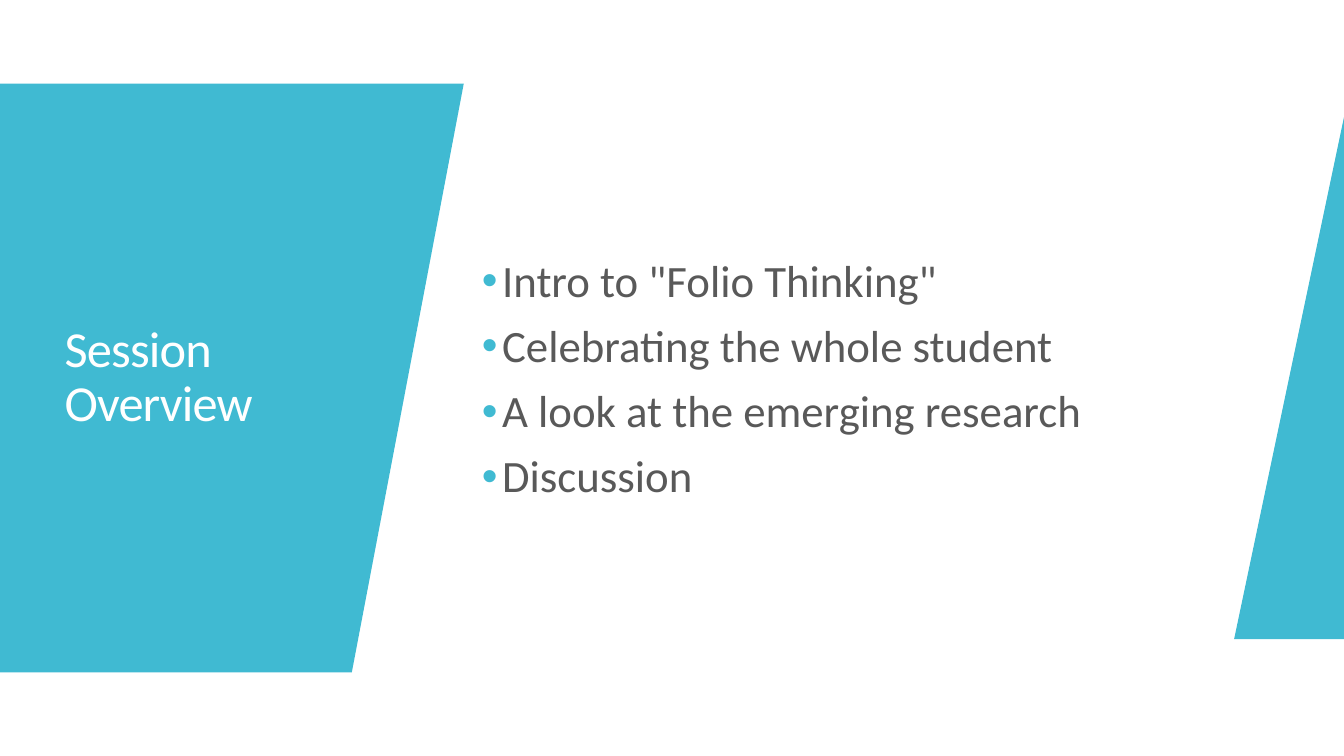
import pptx
import pptx.dml.color
import pptx.enum.text
import pptx.oxml.ns
import pptx.util
from lxml import etree
from pptx.util import Inches

ACCENT = "40BAD2"
FONT = "Calibri"
SLIDE_WIDTH, SLIDE_HEIGHT = 13.33, 7.5
TOPICS = [
    'Intro to "Folio Thinking"',
    "Celebrating the whole student",
    "A look at the emerging research",
    "Discussion",
]


def rgb(hex_colour):
    return pptx.dml.color.RGBColor.from_string(hex_colour)


def add_panel(slide, corners):
    points = [(Inches(x), Inches(y)) for x, y in corners]
    builder = slide.shapes.build_freeform(*points[0])
    builder.add_line_segments(points[1:], close=True)
    panel = builder.convert_to_shape()
    panel.shadow.inherit = False
    panel.fill.solid()
    panel.fill.fore_color.rgb = rgb(ACCENT)
    panel.line.fill.background()
    slide.shapes.title.element.addprevious(panel.element)


def place(placeholder, left, top, width, height):
    placeholder.left, placeholder.top = Inches(left), Inches(top)
    placeholder.width, placeholder.height = Inches(width), Inches(height)
    frame = placeholder.text_frame
    frame.word_wrap = True
    frame.auto_size = pptx.enum.text.MSO_AUTO_SIZE.NONE
    frame.vertical_anchor = pptx.enum.text.MSO_ANCHOR.MIDDLE
    return frame


def write(paragraph, text, size, colour, space_before=0):
    paragraph.alignment = pptx.enum.text.PP_ALIGN.LEFT
    paragraph.line_spacing = 0.9
    paragraph.space_before = pptx.util.Pt(space_before)
    run = paragraph.add_run()
    run.text = text
    run.font.name = FONT
    run.font.size = pptx.util.Pt(size)
    run.font.color.rgb = rgb(colour)
    return run


def add_bullet(paragraph, colour):
    qn = pptx.oxml.ns.qn
    properties = paragraph._p.get_or_add_pPr()
    properties.set("marL", str(Inches(0.38)))
    properties.set("indent", str(Inches(-0.2)))
    bullet_colour = etree.SubElement(properties, qn("a:buClr"))
    etree.SubElement(bullet_colour, qn("a:srgbClr"), val=colour)
    etree.SubElement(properties, qn("a:buFont"), typeface="Arial")
    etree.SubElement(properties, qn("a:buChar"), char="•")


def main():
    deck = pptx.Presentation()
    deck.slide_width, deck.slide_height = Inches(SLIDE_WIDTH), Inches(SLIDE_HEIGHT)
    slide = deck.slides.add_slide(deck.slide_layouts[0])
    slide.background.fill.solid()
    slide.background.fill.fore_color.rgb = rgb("FFFFFF")

    add_panel(slide, [(0, 0.83), (4.6, 0.83), (3.49, 6.67), (0, 6.67)])
    add_panel(slide, [(SLIDE_WIDTH, 1.16), (SLIDE_WIDTH, 6.34), (12.24, 6.34)])

    heading = place(slide.shapes.title, 0.54, 1.84, 3.03, 3.82)
    heading_run = write(heading.paragraphs[0], "Session Overview", 36, "FFFFFF")
    heading_run.font._element.set("spc", "-60")

    agenda = place(slide.placeholders[1], 4.5, 1.88, 8.15, 3.79)
    for index, topic in enumerate(TOPICS):
        paragraph = agenda.add_paragraph() if index else agenda.paragraphs[0]
        write(paragraph, topic, 32, "595959", space_before=12)
        add_bullet(paragraph, ACCENT)

    deck.save("out.pptx")


if __name__ == "__main__":
    main()
